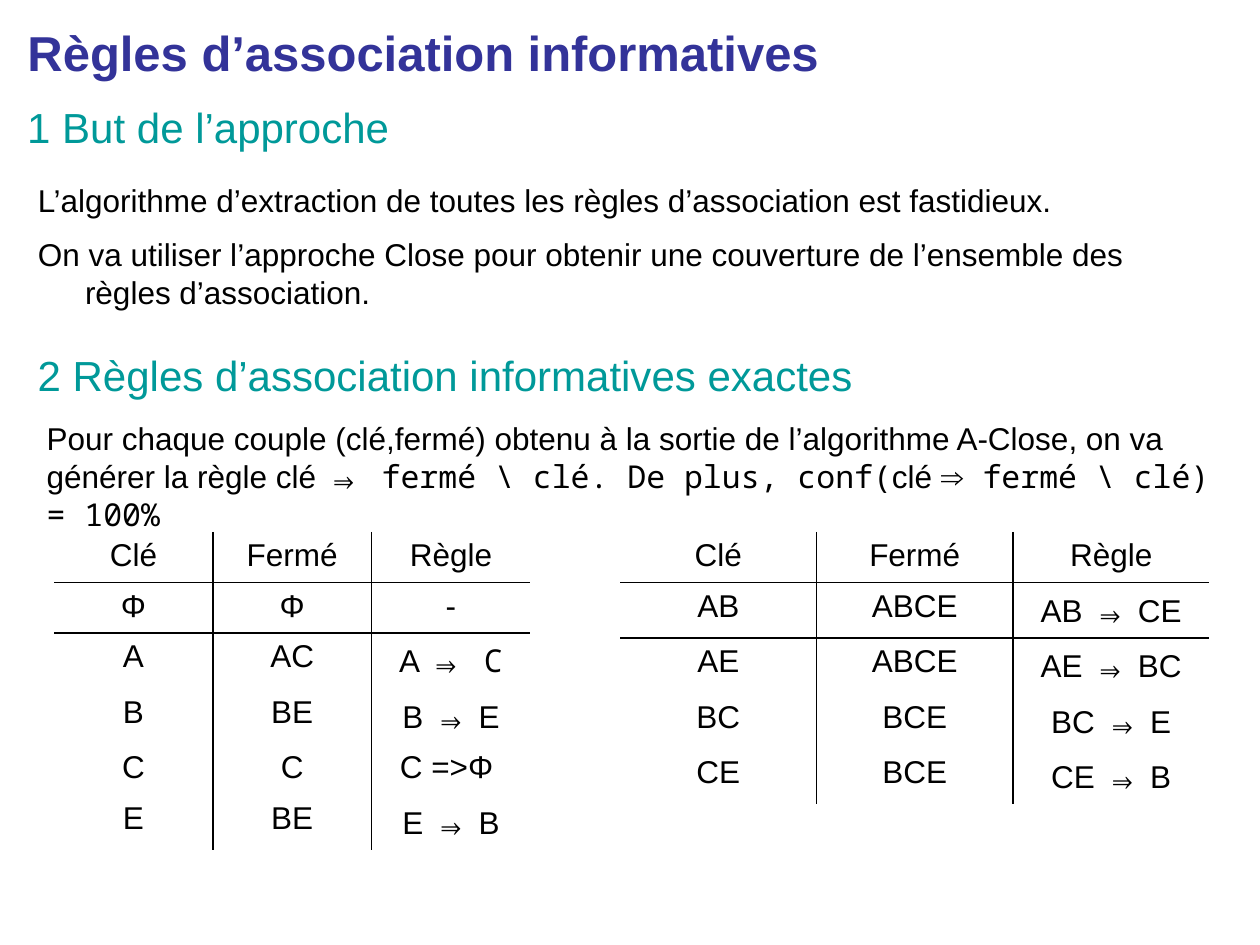
import dataclasses
import typing

import pptx
import pptx.dml.color
import pptx.enum.text
import pptx.oxml
import pptx.oxml.ns
import pptx.util

Cm = pptx.util.Cm
Pt = pptx.util.Pt

COLORS = {"title": "333399", "heading": "009999", "text": "000000"}
SANS = "Arial"
MONO = "Noto Sans Mono"
NO_GRID_STYLE = "{2D5ABB26-0587-4C30-8999-92F81FD0307C}"
INDENT = 0.95


@dataclasses.dataclass(frozen=True)
class Passage:
    left: float
    top: float
    width: float
    height: float
    paragraphs: tuple[str, ...]
    size: int = 18
    color: str = "text"
    bold: bool = False
    hanging: bool = False


@dataclasses.dataclass(frozen=True)
class RuleTable:
    left: float
    column_width: float
    rows: tuple[tuple[str, str, str], ...]
    top: float = 10.72
    row_height: float = 1.02


TITLE = Passage(0.3, 0.33, 23.19, 1.45, ("Règles d’association informatives",),
                28, "title", bold=True)
GOAL = Passage(0.51, 3.53, 23.8, 2.92, (
    "L’algorithme d’extraction de toutes les règles d’association est fastidieux.",
    "On va utiliser l’approche Close pour obtenir une couverture de l’ensemble "
    "des règles d’association.",
), hanging=True)
TEXT_BOXES = (
    Passage(0.3, 1.93, 20.8, 1.27, ("1 But de l’approche",), 24, "heading"),
    Passage(0.51, 6.93, 20.8, 1.27,
            ("2 Règles d’association informatives exactes",), 24, "heading"),
    Passage(0.69, 8.33, 24, 1.78, (
        "Pour chaque couple (clé,fermé) obtenu à la sortie de l’algorithme A-Close, "
        "on va générer la règle clé |⇒ fermé \\ clé. De plus, conf(|clé ⇒"
        "| fermé \\ clé) = 100%",
    )),
)
HEADER = ("Clé", "Fermé", "Règle")
RULE_TABLES = (
    RuleTable(1.09, 3.2, (
        HEADER,
        ("Φ", "Φ", "-"),
        ("A", "AC", "A |⇒ C"),
        ("B", "BE", "B |⇒| E"),
        ("C", "C", "C =>Φ "),
        ("E", "BE", "E |⇒| B"),
    )),
    RuleTable(12.5, 3.96, (
        HEADER,
        ("AB", "ABCE", "AB |⇒| CE"),
        ("AE", "ABCE", "AE |⇒| BC"),
        ("BC", "BCE", "BC |⇒| E"),
        ("CE", "BCE", "CE |⇒| B"),
    )),
)


def write_paragraph(paragraph: typing.Any, marked_text: str, size: int = 18,
                    color: str = "text", bold: bool = False) -> None:
    paragraph.font.name = SANS
    paragraph.font.size = Pt(size)
    paragraph.font.bold = bold
    paragraph.font.color.rgb = pptx.dml.color.RGBColor.from_string(COLORS[color])
    for position, span in enumerate(marked_text.split("|")):
        if span:
            run = paragraph.add_run()
            run.text = span
            if position % 2:
                run.font.name = MONO


def fill_passage(shape: typing.Any, passage: Passage) -> None:
    shape.left, shape.top = Cm(passage.left), Cm(passage.top)
    shape.width, shape.height = Cm(passage.width), Cm(passage.height)
    frame = shape.text_frame
    frame.word_wrap = True
    frame.auto_size = pptx.enum.text.MSO_AUTO_SIZE.NONE
    frame.vertical_anchor = pptx.enum.text.MSO_ANCHOR.TOP
    for index, text in enumerate(passage.paragraphs):
        paragraph = frame.add_paragraph() if index else frame.paragraphs[0]
        paragraph.alignment = pptx.enum.text.PP_ALIGN.LEFT
        paragraph.space_before = Pt(passage.size / 2 if index else 0)
        write_paragraph(paragraph, text, passage.size, passage.color, passage.bold)
        if passage.hanging:
            properties = paragraph.font._element.getparent()
            properties.set("marL", str(Cm(INDENT)))
            properties.set("indent", str(-Cm(INDENT)))
            properties.insert_element_before(
                pptx.oxml.parse_xml(f'<a:buNone {pptx.oxml.ns.nsdecls("a")}/>'),
                "a:tabLst", "a:defRPr", "a:extLst")


def draw_borders(cell: typing.Any, sides: str) -> None:
    properties = cell._tc.get_or_add_tcPr()
    for side in sides:
        properties.append(pptx.oxml.parse_xml(
            f'<a:ln{side} {pptx.oxml.ns.nsdecls("a")} w="{Pt(1)}"><a:solidFill>'
            f'<a:srgbClr val="{COLORS["text"]}"/></a:solidFill></a:ln{side}>'))


def draw_rule_table(slide: typing.Any, rules: RuleTable) -> None:
    row_count, column_count = len(rules.rows), len(HEADER)
    frame = slide.shapes.add_table(
        row_count, column_count, Cm(rules.left), Cm(rules.top),
        Cm(rules.column_width * column_count), Cm(rules.row_height * row_count))
    table = frame.table
    table.first_row = False
    table.horz_banding = False
    table._tbl.tblPr.find(pptx.oxml.ns.qn("a:tableStyleId")).text = NO_GRID_STYLE
    for column in table.columns:
        column.width = Cm(rules.column_width)
    for row_index, row in enumerate(rules.rows):
        table.rows[row_index].height = Cm(rules.row_height)
        for column_index, text in enumerate(row):
            cell = table.cell(row_index, column_index)
            paragraph = cell.text_frame.paragraphs[0]
            paragraph.alignment = pptx.enum.text.PP_ALIGN.CENTER
            write_paragraph(paragraph, text)
            bordered = {
                "L": column_index > 0,
                "R": column_index < column_count - 1,
                "T": row_index == 1,
                "B": row_index == 0,
            }
            draw_borders(cell, "".join(side for side, drawn in bordered.items() if drawn))
            cell.fill.background()


def main() -> None:
    presentation = pptx.Presentation()
    presentation.slide_width, presentation.slide_height = Cm(25.4), Cm(19.05)
    slide = presentation.slides.add_slide(presentation.slide_layouts[1])
    fill_passage(slide.shapes.title, TITLE)
    fill_passage(slide.placeholders[1], GOAL)
    for passage in TEXT_BOXES:
        fill_passage(slide.shapes.add_textbox(0, 0, 0, 0), passage)
    for rules in RULE_TABLES:
        draw_rule_table(slide, rules)
    presentation.save("out.pptx")


if __name__ == "__main__":
    main()
